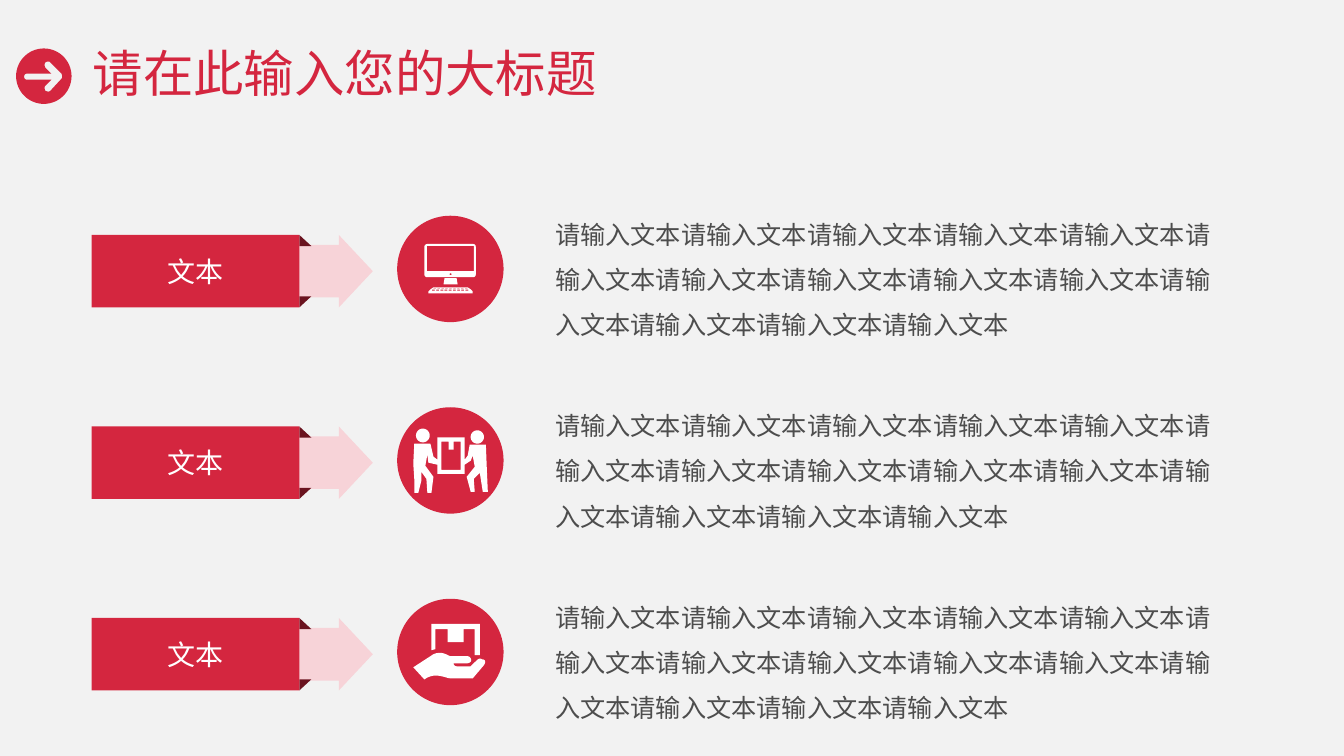
from math import cos, pi, sin

from lxml.etree import SubElement
from pptx import Presentation
from pptx.dml.color import RGBColor
from pptx.enum.shapes import MSO_SHAPE as Preset
from pptx.enum.text import MSO_ANCHOR as Anchor, MSO_AUTO_SIZE as AutoSize, PP_ALIGN as Align
from pptx.oxml.ns import qn
from pptx.util import Pt

RED = RGBColor(0xD4, 0x26, 0x3F)
DARK_RED = RGBColor(0x6A, 0x13, 0x1F)
PINK = RGBColor(0xF7, 0xD3, 0xD8)
WHITE = RGBColor(0xFF, 0xFF, 0xFF)
GREY = RGBColor(0x4D, 0x4D, 0x4D)
BACKGROUND = RGBColor(0xF2, 0xF2, 0xF2)
FONT = "Noto Sans CJK SC"
ICON_UNIT = 0.72
ROW_PITCH = 136.8


def circle(center_x, center_y, radius, steps=60):
    """Return the points of a round contour."""
    angles = [2 * pi * step / steps for step in range(steps)]
    return [(center_x + radius * cos(a), center_y + radius * sin(a)) for a in angles]


def rectangle(left, top, width, height):
    """Return the corners of a rectangular contour."""
    right, bottom = left + width, top + height
    return [(left, top), (right, top), (right, bottom), (left, bottom)]


def flatten(contour, steps=10):
    """Turn pairs (lines) and sextuples (cubic curves) into plain points."""
    points = []
    for segment in contour:
        if len(segment) == 2:
            points.append(segment)
            continue
        controls = [points[-1], segment[:2], segment[2:4], segment[4:]]
        for step in range(1, steps + 1):
            t = step / steps
            weights = ((1 - t) ** 3, 3 * t * (1 - t) ** 2, 3 * t * t * (1 - t), t ** 3)
            points.append(tuple(
                sum(weight * point[axis] for weight, point in zip(weights, controls))
                for axis in (0, 1)))
    return points


BADGE = [
    circle(27.5, 27.5, 27.5),
    [(32, 13), (31, 13, 30, 13, 29, 14), (28, 15, 28, 17, 29, 19), (35, 25), (11, 25),
     (9, 25, 8, 26, 8, 28), (8, 30, 9, 31, 11, 31), (35, 31), (29, 37),
     (28, 38, 28, 40, 29, 42), (31, 43, 33, 43, 34, 42), (45, 30),
     (46, 29, 46, 27, 45, 25), (34, 14), (33, 13, 33, 13, 32, 13)],
]
COMPUTER = [
    [(75, 28), (30, 28), (28.5, 28, 27, 29, 27, 31), (27, 58), (27, 60, 28.5, 61, 30, 61),
     (75, 61), (77, 61, 78, 60, 78, 58), (78, 31), (78, 29, 77, 28, 75, 28)],
    rectangle(29.5, 30, 46.5, 25),
    circle(53, 58, 1),
    [(60, 68), (46, 68), (47, 62), (59, 62)],
    [(75, 77), (31, 77), (31, 75), (33, 73), (36, 71), (70, 71), (73, 73), (75, 75)],
    *[rectangle(36 + 3.9 * key, 72, 2.7, 0.6) for key in range(9)],
    *[rectangle(34.5 + 4.15 * key, 73.3, 3, 0.9) for key in range(9)],
]
CARRIERS = [
    circle(25.5, 28, 6.8),
    circle(79.5, 29.5, 6.6),
    [(40, 30), (40, 52), (36, 49), (33, 36), (17, 36), (16, 56), (17, 71), (17, 85),
     (21, 85), (24, 73), (24, 64), (29, 71), (30, 85), (34, 85), (36, 69), (28, 58),
     (30, 47), (31, 55), (40, 57), (40, 66), (67, 66), (67, 57), (73, 53), (75, 48),
     (77, 59), (69, 69), (73, 84), (77, 84), (76, 71), (82, 65), (85, 84), (90, 84),
     (89, 62), (88, 37), (72, 37), (70, 48), (67, 52), (67, 30)],
    [(56, 34), (56, 42), (51, 42), (51, 34), (44, 34), (44, 62), (63, 62), (63, 34)],
]
HAND_WITH_BOX = [
    [(86, 66), (75, 79), (53, 79), (48, 79, 38, 72, 27, 80), (16, 68), (36, 55),
     (45, 51, 51, 57, 53, 57), (70, 57), (73, 57, 76, 63, 70, 64), (56, 64),
     (56, 64, 56, 67, 59, 67), (73, 67), (79, 61), (82, 58, 84, 60, 84, 60),
     (84, 60, 90, 60, 86, 66)],
    [(77, 30), (66, 30), (66, 43), (50, 43), (50, 30), (38, 30), (38, 50), (34, 51),
     (34, 25), (82, 25), (82, 56), (77, 56)],
]


def paint(shape, color):
    """Give a shape a plain fill without line or shadow."""
    shape.shadow.inherit = False
    shape.fill.solid()
    shape.fill.fore_color.rgb = color
    shape.line.fill.background()


def add_preset(slide, preset, left, top, width, height, color):
    """Add a plain preset shape."""
    shape = slide.shapes.add_shape(preset, Pt(left), Pt(top), Pt(width), Pt(height))
    paint(shape, color)
    return shape


def add_icon(slide, contours, left, top, color):
    """Draw contours, with inner ones as holes, from the corner given."""
    outlines = [[(Pt(left + x * ICON_UNIT), Pt(top + y * ICON_UNIT))
                 for x, y in flatten(contour)] for contour in contours]
    builder = slide.shapes.build_freeform(*outlines[0][0])
    for index, outline in enumerate(outlines):
        if index:
            builder.move_to(*outline[0])
        builder.add_line_segments(outline[1:], close=True)
    paint(builder.convert_to_shape(), color)


def write(shape, text, size, color, align=Align.LEFT, spacing=1.0):
    """Write one formatted run into a shape, centred vertically."""
    frame = shape.text_frame
    frame.word_wrap = True
    frame.auto_size = AutoSize.NONE
    frame.vertical_anchor = Anchor.MIDDLE
    paragraph = frame.paragraphs[0]
    paragraph.alignment = align
    paragraph.line_spacing = spacing
    run = paragraph.add_run()
    run.text = text
    run.font.size = Pt(size)
    run.font.color.rgb = color
    run.font.name = FONT
    SubElement(run._r.get_or_add_rPr(), qn("a:ea"), typeface=FONT)


def add_header(slide, left, top, width, height):
    """Place the arrow badge and the title."""
    add_icon(slide, BADGE, left, top + 13.7, RED)
    title = slide.shapes.title
    title.left, title.top = Pt(left + 47.5), Pt(top)
    title.width, title.height = Pt(width - 47.5), Pt(height)
    write(title, "请在此输入您的大标题", 36, RED, spacing=0.9)


def add_ribbon(slide, left, top, width, height):
    """Place a label with folded corners and the arrow behind it."""
    label_width, fold_height = width - 52.5, 7.9
    arrow = add_preset(slide, Preset.RIGHT_ARROW, left + width - 73.4, top, 73.4, height, PINK)
    arrow.adjustments[0], arrow.adjustments[1] = 0.726, 0.468
    fold_left = left + label_width
    lower_fold = add_preset(slide, Preset.RIGHT_TRIANGLE, fold_left,
                            top + height - fold_height, 8.6, fold_height, DARK_RED)
    lower_fold._element.spPr.find(qn("a:xfrm")).set("flipV", "1")
    add_preset(slide, Preset.RIGHT_TRIANGLE, fold_left, top, 8.6, fold_height, DARK_RED)
    label = add_preset(slide, Preset.RECTANGLE, left, top, label_width, height, RED)
    frame = label.text_frame
    frame.margin_left = frame.margin_right = frame.margin_top = frame.margin_bottom = 0
    write(label, "文本", 20, WHITE, Align.CENTER)


def add_row(slide, icon, left, top, width, height):
    """Place a ribbon, its round icon and its description."""
    add_ribbon(slide, left, top + 32.4, 200.8, 51.8)
    icon_left, icon_top = left + 218.2, top + 18.7
    add_preset(slide, Preset.OVAL, icon_left, icon_top, 76, 76, RED)
    add_icon(slide, icon, icon_left, icon_top, WHITE)
    description = slide.shapes.add_textbox(
        Pt(left + 324), Pt(top), Pt(width - 324), Pt(height))
    write(description, "请输入文本" * 14, 18, GREY, spacing=1.5)


def main():
    """Build and save the slide."""
    presentation = Presentation()
    presentation.slide_width, presentation.slide_height = Pt(960), Pt(540)
    slide = presentation.slides.add_slide(presentation.slide_layouts[5])
    slide.background.fill.solid()
    slide.background.fill.fore_color.rgb = BACKGROUND
    add_header(slide, 11.5, 20.9, 838, 67)
    for index, icon in enumerate((COMPUTER, CARRIERS, HAND_WITH_BOX)):
        add_row(slide, icon, 65.5, 135.4 + index * ROW_PITCH, 810.7, 117.4)
    presentation.save("out.pptx")


if __name__ == "__main__":
    main()
